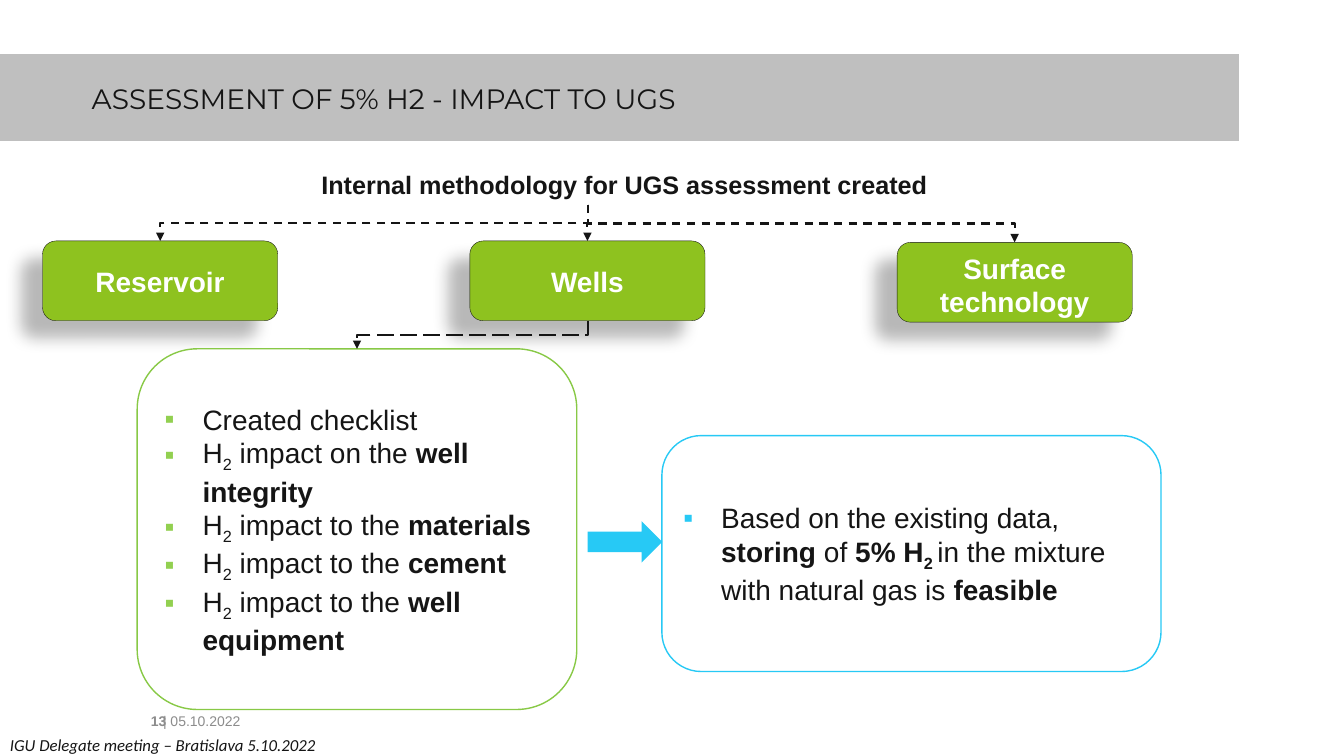
from lxml.etree import SubElement
from pptx import Presentation
from pptx.dml.color import RGBColor
from pptx.enum.dml import MSO_LINE
from pptx.enum.shapes import MSO_CONNECTOR, MSO_SHAPE
from pptx.enum.text import MSO_ANCHOR, PP_ALIGN
from pptx.oxml.ns import qn
from pptx.util import Pt

COLORS = {
    "ink": "151515", "white": "FFFFFF", "banner": "BFBFBF", "muted": "8C8C8C",
    "green": "8EC21F", "green_line": "88C946", "green_bullet": "92D050",
    "blue": "27C9F5", "shadow": "000000",
}
CHECKLIST = [
    [("Created checklist", "")],
    [("H", ""), ("2", "s"), (" impact on the ", ""), ("well integrity", "b")],
    *[[("H", ""), ("2", "s"), (" impact to the ", ""), (subject, "b")]
      for subject in ("materials", "cement", "well equipment")],
]
CONCLUSION = [[
    ("Based on the existing data, ", ""), ("storing", "b"), (" of ", ""),
    ("5% H", "b"), ("2 ", "bs"), ("in the mixture with natural gas is ", ""),
    ("feasible", "b"),
]]


def rgb(name):
    """Return the named palette colour."""
    return RGBColor.from_string(COLORS[name])


def write(shape, content, size=20, font="Arial", color="ink", bold=False, italic=False,
          align=PP_ALIGN.LEFT, anchor=MSO_ANCHOR.TOP, bullet=None, insets=None):
    """Fill a shape with a string or with paragraphs of (text, style) runs."""
    frame = shape.text_frame
    frame.word_wrap = True
    frame.vertical_anchor = anchor
    if insets:
        (frame.margin_left, frame.margin_top,
         frame.margin_right, frame.margin_bottom) = map(Pt, insets)
    paragraphs = [[(content, "")]] if isinstance(content, str) else content
    for index, runs in enumerate(paragraphs):
        paragraph = frame.add_paragraph() if index else frame.paragraphs[0]
        paragraph.alignment = align
        if bullet:
            add_bullet(paragraph, bullet)
        for text, style in runs:
            run = paragraph.add_run()
            run.text = text
            run.font.size = Pt(size)
            run.font.name = font
            run.font.bold = bold or "b" in style
            run.font.italic = italic
            run.font.color.rgb = rgb(color)
            if "s" in style:
                run.font._element.set("baseline", "-25000")


def add_bullet(paragraph, color):
    """Give a paragraph a hanging square bullet."""
    properties = paragraph._p.get_or_add_pPr()
    properties.set("marL", str(Pt(27)))
    properties.set("indent", str(-Pt(27)))
    bullet_color = SubElement(properties, qn("a:buClr"))
    SubElement(bullet_color, qn("a:srgbClr"), val=COLORS[color])
    SubElement(properties, qn("a:buFont"), typeface="Arial")
    SubElement(properties, qn("a:buChar"), char="▪")


def add_block(slide, kind, box, fill, line=None, width=1):
    """Add a filled preset shape without a shadow."""
    block = slide.shapes.add_shape(kind, *map(Pt, box))
    block.shadow.inherit = False
    block.fill.solid()
    block.fill.fore_color.rgb = rgb(fill)
    if line:
        block.line.color.rgb = rgb(line)
        block.line.width = Pt(width)
    else:
        block.line.fill.background()
    return block


def add_label(slide, box, text, **text_format):
    """Add a formatted text box."""
    write(slide.shapes.add_textbox(*map(Pt, box)), text, **text_format)


def add_branch(slide, start, end, dash=MSO_LINE.DASH):
    """Draw an elbow arrow that leaves downwards and turns halfway."""
    (x1, y1), (x2, y2) = start, end
    rightward = x2 > x1
    center_x, center_y = (x1 + x2) / 2, (y1 + y2) / 2
    half_drop = (y2 - y1) / 2 * (-1 if rightward else 1)
    half_span = abs(x2 - x1) / 2
    branch = slide.shapes.add_connector(
        MSO_CONNECTOR.ELBOW,
        Pt(center_x - half_drop), Pt(center_y - half_span),
        Pt(center_x + half_drop), Pt(center_y + half_span))
    properties = branch._element.spPr
    properties.find(qn("a:xfrm")).set("rot", "16200000" if rightward else "5400000")
    branch.line.color.rgb = rgb("ink")
    branch.line.width = Pt(1.5)
    branch.line.dash_style = dash
    SubElement(properties.find(qn("a:ln")), qn("a:tailEnd"), type="triangle")
    SubElement(properties, qn("a:effectLst"))


def add_banner(slide, box):
    """Draw the title band."""
    banner = add_block(slide, MSO_SHAPE.RECTANGLE, box, "banner")
    write(banner, "ASSESSMENT OF 5% H2 - IMPACT TO UGS", font="Montserrat",
          insets=(65.5, 22.3, 7.2, 17.3))
    banner.text_frame.paragraphs[0].line_spacing = 0.9


def add_area(slide, box, name, anchor):
    """Draw one green assessment area with its cast shadow."""
    area = add_block(slide, MSO_SHAPE.ROUNDED_RECTANGLE, box, "green", "ink", 0.25)
    effects = area._element.spPr.find(qn("a:effectLst"))
    cast = SubElement(effects, qn("a:outerShdw"), blurRad=str(Pt(11.8)),
                      dist=str(Pt(19.7)), dir=str(141 * 60000), algn="ctr", rotWithShape="0")
    shade = SubElement(cast, qn("a:srgbClr"), val=COLORS["shadow"])
    SubElement(shade, qn("a:alpha"), val="28000")
    write(area, name, color="white", bold=True, align=PP_ALIGN.CENTER, anchor=anchor)


def add_methodology(slide, box):
    """Draw the heading and its three branches to the assessment areas."""
    left, top, width, height = box
    area_width, area_height = 168, 57
    step = (width - area_width) / 2
    area_top = top + height - area_height
    root = (left + width / 2 + 0.3, top + 28.8)
    areas = [("Reservoir", MSO_ANCHOR.MIDDLE, 0), ("Wells", MSO_ANCHOR.MIDDLE, 0),
             ("Surface technology", MSO_ANCHOR.TOP, 1)]
    for index, (name, anchor, drop) in enumerate(areas):
        area_left, y = left + index * step, area_top + drop
        add_branch(slide, root, (area_left + area_width / 2, y))
        add_area(slide, (area_left, y, area_width, area_height), name, anchor)
    add_label(slide, (left + 192, top, 480, 29),
              "Internal methodology for UGS assessment created", size=18, bold=True)


def add_findings(slide, box):
    """Draw the well checklist, the arrow and the conclusion."""
    left, top, width, height = box
    panels = [((left, top, 314, height), CHECKLIST, "green_line", "green_bullet"),
              ((left + width - 356.5, top + 62, 356.5, 168.5), CONCLUSION, "blue", "blue")]
    for panel_box, content, line, bullet in panels:
        panel = add_block(slide, MSO_SHAPE.ROUNDED_RECTANGLE, panel_box, "white", line)
        write(panel, content, anchor=MSO_ANCHOR.MIDDLE, bullet=bullet)
    add_block(slide, MSO_SHAPE.RIGHT_ARROW, (left + 321.8, top + 123.1, 53.3, 29.5), "blue")
    add_branch(slide, (left + 321.8, top - 20.2), (left + 157, top), MSO_LINE.LONG_DASH)


def add_footer(slide, box):
    """Write the page number, date and event line."""
    left, top, width, height = box
    add_label(slide, (left + 109.4, top, 216, 28.8), "| 05.10.2022", size=10,
              color="muted", anchor=MSO_ANCHOR.MIDDLE)
    add_label(slide, (left + 77.8, top, 48.2, 28.8), "13", size=10, color="muted",
              bold=True, align=PP_ALIGN.RIGHT, anchor=MSO_ANCHOR.MIDDLE)
    add_label(slide, (left, top + height - 28.8, width, 28.8),
              "IGU Delegate meeting – Bratislava 5.10.2022", size=12,
              font="Calibri", italic=True)


def main():
    """Build and save the slide."""
    deck = Presentation()
    deck.slide_width, deck.slide_height = Pt(960), Pt(540)
    slide = deck.slides.add_slide(deck.slide_layouts[6])
    add_banner(slide, (0, 38.7, 885, 62))
    add_methodology(slide, (30.4, 117.4, 778.4, 111.7))
    add_findings(slide, (98, 249.2, 731.3, 257.6))
    add_footer(slide, (0, 500.4, 433.4, 49.7))
    deck.save("out.pptx")


if __name__ == "__main__":
    main()
